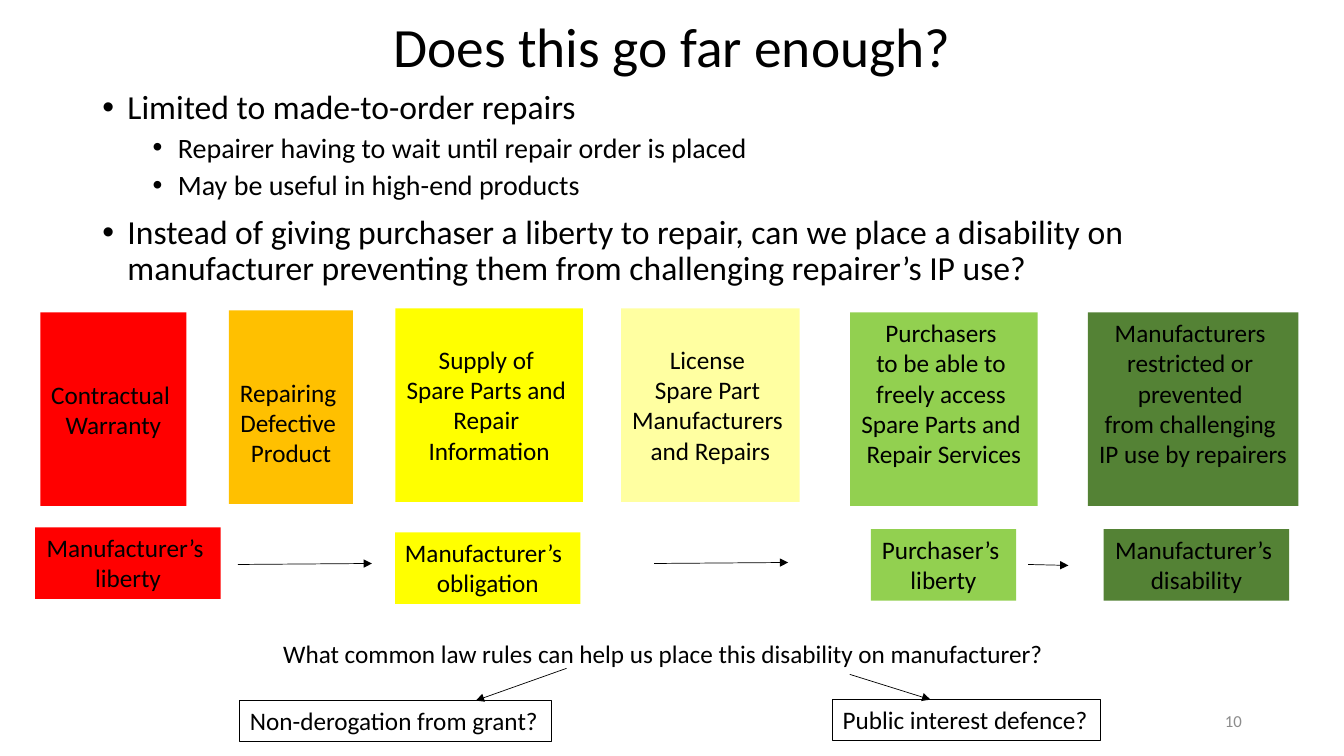
import pptx
import pptx.util
import pptx.dml.color
import pptx.enum.shapes
import pptx.enum.text
import pptx.oxml.ns
import lxml.etree
from dataclasses import dataclass

Pt = pptx.util.Pt
Align = pptx.enum.text.PP_ALIGN
Anchor = pptx.enum.text.MSO_ANCHOR
qn = pptx.oxml.ns.qn


@dataclass(frozen=True)
class Theme:
    font: str = "Calibri"
    ink: str = "000000"
    grey: str = "8C8C8C"
    red: str = "FF0000"
    orange: str = "FFC000"
    yellow: str = "FFFF00"
    lime: str = "92D050"
    green: str = "548235"
    title: float = 39.6
    head: float = 24
    sub: float = 20
    text: float = 18
    small: float = 12
    row: float = 22
    pad: float = 3.6


theme = Theme()


def paint(hue):
    return pptx.dml.color.RGBColor.from_string(hue)


def style(para, size, hue=theme.ink, align=Align.LEFT):
    para.font.name = theme.font
    para.font.size = Pt(size)
    para.font.color.rgb = paint(hue)
    para.alignment = align


def write(frame, lines, size, hue=theme.ink, align=Align.LEFT):
    frame.text = "\n".join(lines)
    for para in frame.paragraphs:
        style(para, size, hue, align)


def add_text(slide, box, lines, size, hue=theme.ink, align=Align.LEFT,
             anchor=Anchor.TOP, wrap=True):
    frame = slide.shapes.add_textbox(*map(Pt, box)).text_frame
    frame.word_wrap = wrap
    frame.vertical_anchor = anchor
    write(frame, lines, size, hue, align)
    return frame


def add_title(slide, box, text):
    frame = add_text(slide, box, [text], theme.title, align=Align.CENTER,
                     anchor=Anchor.MIDDLE)
    frame.paragraphs[0].line_spacing = 0.9


def add_points(slide, box, points):
    frame = add_text(slide, box, [text for _, text in points], theme.head)
    for para, (level, _) in zip(frame.paragraphs, points):
        para.level = level
        para.line_spacing = 0.9
        para.space_before = Pt(5 if level else 10)
        para.font.size = Pt(theme.sub if level else theme.head)
        props = para._p.get_or_add_pPr()
        props.set("marL", str(Pt(18 + 36 * level)))
        props.set("indent", str(Pt(-18)))
        face = lxml.etree.SubElement(props, qn("a:buFont"))
        face.set("typeface", "Arial")
        mark = lxml.etree.SubElement(props, qn("a:buChar"))
        mark.set("char", "•")
        props.append(props.find(qn("a:defRPr")))


def add_panel(slide, box, lines, fill=None, alpha=None, skip=0,
              align=Align.CENTER):
    kind = pptx.enum.shapes.MSO_SHAPE.RECTANGLE
    panel = slide.shapes.add_shape(kind, *map(Pt, box))
    panel.shadow.inherit = False
    if fill:
        panel.fill.solid()
        panel.fill.fore_color.rgb = paint(fill)
        panel.line.fill.background()
    else:
        panel.fill.background()
        panel.line.color.rgb = paint(theme.ink)
        panel.line.width = Pt(0.75)
    if alpha:
        tint = panel._element.spPr.find(qn("a:solidFill"))[0]
        lxml.etree.SubElement(tint, qn("a:alpha")).set("val", str(alpha * 1000))
    frame = panel.text_frame
    frame.word_wrap = False
    frame.vertical_anchor = Anchor.TOP
    frame.margin_top = Pt(theme.pad + skip * theme.row)
    write(frame, lines, theme.text, align=align)
    return frame


def add_arrow(slide, *ends):
    kind = pptx.enum.shapes.MSO_CONNECTOR.STRAIGHT
    arrow = slide.shapes.add_connector(kind, *map(Pt, ends))
    arrow.line.color.rgb = paint(theme.ink)
    arrow.line.width = Pt(0.5)
    tip = lxml.etree.SubElement(arrow.line._get_or_add_ln(), qn("a:tailEnd"))
    tip.set("type", "triangle")
    lxml.etree.SubElement(arrow._element.spPr, qn("a:effectLst"))


def add_steps(slide, box):
    left, top, _, high = box
    steps = [
        (0, 2.9, 104.4, theme.red, None, 2, ["Contractual ", "Warranty"]),
        (134.8, 1.4, 88.6, theme.orange, None, 2,
         ["Repairing ", "Defective ", "Product"]),
        (253.6, 0, 134, theme.yellow, None, 1,
         ["Supply of ", "Spare Parts and ", "Repair ", "Information"]),
        (414.8, 0, 127.6, theme.yellow, 37, 1,
         ["License ", "Spare Part ", "Manufacturers ", "and Repairs"]),
        (578.4, 2.9, 134, theme.lime, None, 0,
         ["Purchasers ", "to be able to ", "freely access ",
          "Spare Parts and ", "Repair Services"]),
        (748.2, 2.9, 150.4, theme.green, None, 0,
         ["Manufacturers ", "restricted or ", "prevented ",
          "from challenging ", "IP use by repairers"]),
    ]
    for x, y, wide, fill, alpha, skip, lines in steps:
        add_panel(slide, (left + x, top + y, wide, high), lines, fill, alpha, skip)


def add_roles(slide, box):
    left, top, _, high = box
    roles = [
        (0, 0, 132.5, theme.red, ["Manufacturer’s ", "liberty"]),
        (257, 3.6, 132.5, theme.yellow, ["Manufacturer’s", "obligation"]),
        (596.9, 1.4, 103.7, theme.lime, ["Purchaser’s ", "liberty"]),
        (763.2, 1.4, 132.5, theme.green, ["Manufacturer’s ", "disability"]),
    ]
    for x, y, wide, fill, lines in roles:
        frame = add_panel(slide, (left + x, top + y, wide, high), lines, fill)
        if fill == theme.yellow:
            frame.paragraphs[0].alignment = Align.LEFT
    for start, y, end, drop in [(144.7, 26.6, 240.5, -0.7),
                                (442.1, 25.9, 537.8, -0.7),
                                (709.2, 26.6, 738, 0.7)]:
        add_arrow(slide, left + start, top + y, left + end, top + y + drop)


def add_rules(slide, box):
    left, top, wide, high = box
    ask = "What common law rules can help us place this disability on manufacturer?"
    add_text(slide, (left + 23.8, top, 568.1, high), [ask], theme.text, wrap=False)
    last = wide - 191.5
    for x, y, span, text in [(0, 48.2, 222.5, "Non-derogation from grant?"),
                             (last, 47.5, 191.5, "Public interest defence?")]:
        add_panel(slide, (left + x, top + y, span, high), [text], align=Align.LEFT)
    add_arrow(slide, left + 233.3, top + 25.2, left + 168.5, top + 48.2)
    add_arrow(slide, left + 435.6, top + 29.5, left + 493.2, top + 47.5)


def main():
    deck = pptx.Presentation()
    deck.slide_width, deck.slide_height = Pt(960), Pt(540)
    slide = deck.slides.add_slide(deck.slide_layouts[6])
    add_title(slide, (66, 8.6, 828, 54), "Does this go far enough?")
    add_points(slide, (66, 61.2, 828, 449.3), [
        (0, "Limited to made-to-order repairs"),
        (1, "Repairer having to wait until repair order is placed"),
        (1, "May be useful in high-end products"),
        (0, "Instead of giving purchaser a liberty to repair, can we place "
            "a disability on manufacturer preventing them from challenging "
            "repairer’s IP use?"),
    ])
    add_steps(slide, (28.8, 220.3, 898.6, 138.2))
    add_roles(slide, (25.2, 376.6, 895.7, 51.1))
    add_rules(slide, (171.4, 452.2, 614.9, 29))
    add_text(slide, (678.2, 500.4, 216, 28.8), ["10"], theme.small, theme.grey,
             Align.RIGHT, Anchor.MIDDLE)
    deck.save("out.pptx")


if __name__ == "__main__":
    main()
